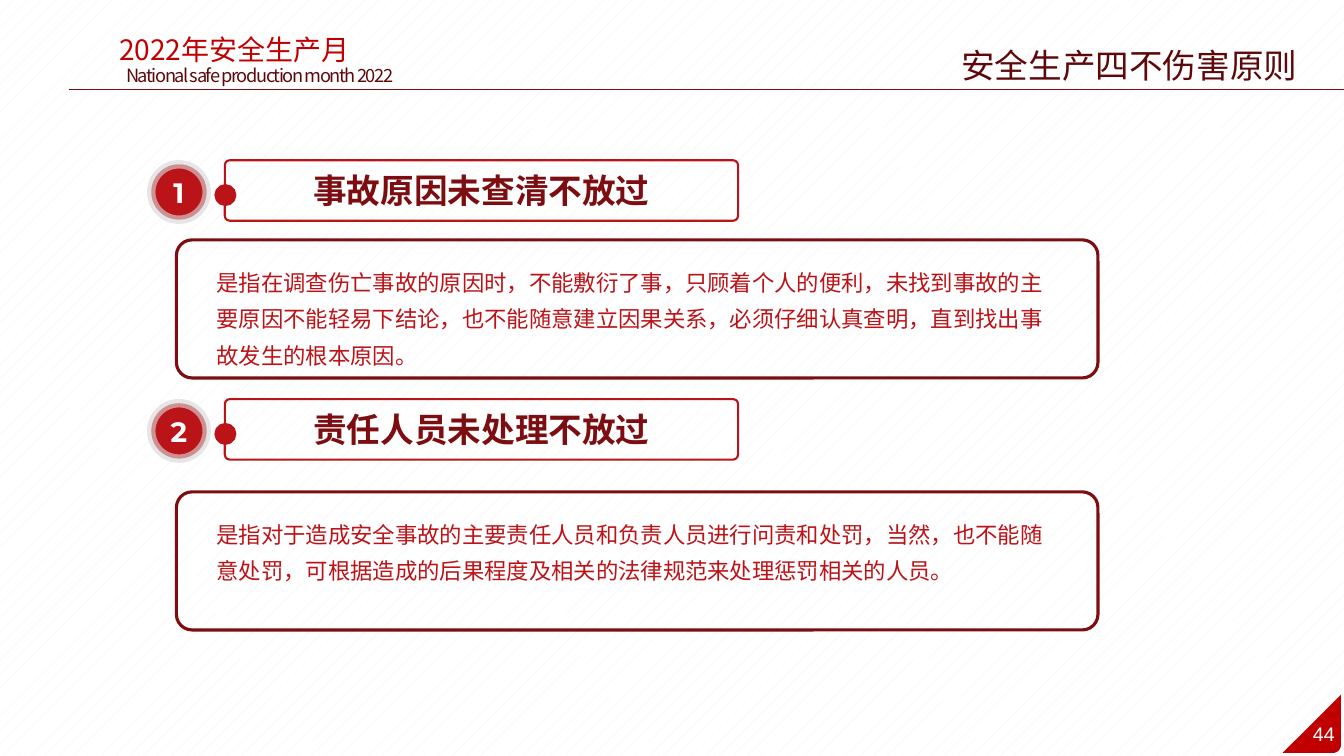
from dataclasses import dataclass
from math import cos, pi, sin
from typing import Optional

from lxml.etree import SubElement
from pptx import Presentation
from pptx.dml.color import RGBColor
from pptx.enum.dml import MSO_PATTERN
from pptx.enum.shapes import MSO_CONNECTOR, MSO_SHAPE as Preset
from pptx.enum.text import MSO_ANCHOR as Anchor, MSO_AUTO_SIZE as AutoSize, PP_ALIGN as Align
from pptx.oxml.ns import qn
from pptx.util import Inches, Pt


@dataclass(frozen=True)
class Theme:
    bright: str = "C00000"
    red: str = "BA1318"
    dark: str = "7C0D10"
    deep: str = "5D090C"
    white: str = "FFFFFF"
    ring: str = "D9D9D9"
    hatch: str = "F2F2F2"
    cjk: str = "Noto Sans CJK SC"
    digits: str = "Montserrat"
    page: str = "Arial"
    heading_size: int = 24
    banner_size: int = 20
    body_size: int = 16
    page_size: int = 14
    subtitle_size: int = 13


@dataclass(frozen=True)
class Box:
    left: float
    top: float
    width: float
    height: float

    def emu(self) -> tuple:
        return tuple(Inches(v) for v in (self.left, self.top, self.width, self.height))


@dataclass(frozen=True)
class Style:
    size: int
    color: str
    font: str
    bold: bool = False
    align: Align = Align.CENTER
    wrap: bool = True
    anchor: Anchor = Anchor.TOP
    line_spacing: Optional[float] = None
    tracking: Optional[int] = None


@dataclass(frozen=True)
class Principle:
    number: str
    heading: str
    detail: str
    top: float
    detail_top: float
    text_height: float


THEME = Theme()
PRINCIPLES = (
    Principle("1", "事故原因未查清不放过",
              "是指在调查伤亡事故的原因时，不能敷衍了事，只顾着个人的便利，未找到事故的主要原因不能轻易下结论，"
              "也不能随意建立因果关系，必须仔细认真查明，直到找出事故发生的根本原因。", 1.59, 2.38, 1.15),
    Principle("2", "责任人员未处理不放过",
              "是指对于造成安全事故的主要责任人员和负责人员进行问责和处罚，当然，也不能随意处罚，"
              "可根据造成的后果程度及相关的法律规范来处理惩罚相关的人员。", 3.96, 4.88, 0.79),
)


def rgb(color: str) -> RGBColor:
    return RGBColor.from_string(color)


def write(shape, text: str, style: Style) -> None:
    frame = shape.text_frame
    frame.auto_size = AutoSize.NONE
    frame.word_wrap = style.wrap
    frame.vertical_anchor = style.anchor
    paragraph = frame.paragraphs[0]
    paragraph.alignment = style.align
    if style.line_spacing:
        paragraph.line_spacing = style.line_spacing
    run = paragraph.add_run()
    run.text = text
    font = run.font
    font.size, font.bold, font.name = Pt(style.size), style.bold, style.font
    font.color.rgb = rgb(style.color)
    properties = run._r.get_or_add_rPr()
    SubElement(properties, qn("a:ea")).set("typeface", style.font)
    if style.tracking:
        properties.set("spc", str(style.tracking))


def add_text(slide, box: Box, text: str, style: Style) -> None:
    write(slide.shapes.add_textbox(*box.emu()), text, style)


def add_preset(slide, kind: Preset, box: Box, line: str, weight: float,
               fill: Optional[str] = None, corner: Optional[float] = None):
    shape = slide.shapes.add_shape(kind, *box.emu())
    shape.shadow.inherit = False
    if fill:
        shape.fill.solid()
        shape.fill.fore_color.rgb = rgb(fill)
    else:
        shape.fill.background()
    shape.line.color.rgb = rgb(line)
    shape.line.width = Pt(weight)
    if corner is not None:
        shape.adjustments[0] = corner
    return shape


def add_header(slide) -> None:
    rule = slide.shapes.add_connector(
        MSO_CONNECTOR.STRAIGHT, Inches(0.68), Inches(0.89), Inches(13.33), Inches(0.89))
    rule.line.color.rgb = rgb(THEME.dark)
    rule.line.width = Pt(0.75)
    SubElement(rule._element.spPr, qn("a:effectLst"))
    add_text(slide, Box(0.61, 0.27, 3.43, 0.44), "2022年安全生产月",
             Style(THEME.banner_size, THEME.bright, THEME.cjk))
    add_text(slide, Box(1.1, 0.59, 2.95, 0.32), "National safe production month 2022",
             Style(THEME.subtitle_size, THEME.deep, THEME.cjk, wrap=False, tracking=-100))
    title = slide.shapes.title
    title.left, title.top, title.width, title.height = Box(9.1, 0.4, 4.2, 0.5).emu()
    write(title, "安全生产四不伤害原则", Style(THEME.heading_size, THEME.deep, THEME.cjk))


def add_page_corner(slide, page: str) -> None:
    right, bottom, side, radius, steps = 13.3, 7.47, 0.58, 0.08, 6
    arc = [(right - radius + radius * cos(pi / 2 * i / steps),
            bottom - radius + radius * sin(pi / 2 * i / steps)) for i in range(steps + 1)]
    outline = slide.shapes.build_freeform(Inches(right), Inches(bottom - side))
    outline.add_line_segments([(Inches(x), Inches(y)) for x, y in arc + [(right - side, bottom)]])
    corner = outline.convert_to_shape()
    corner.shadow.inherit = False
    corner.fill.solid()
    corner.fill.fore_color.rgb = rgb(THEME.bright)
    corner.line.fill.background()
    add_text(slide, Box(12.91, 7.11, 0.44, 0.34), page,
             Style(THEME.page_size, THEME.white, THEME.page, wrap=False))


def add_principle(slide, item: Principle) -> None:
    # Number badge with a translucent ring
    badge = add_preset(slide, Preset.OVAL, Box(1.5, item.top + 0.04, 0.55, 0.55),
                       THEME.ring, 6, THEME.red)
    ring = badge.line.fill._xPr.find(qn("a:solidFill"))[0]
    SubElement(ring, qn("a:alpha")).set("val", "63000")
    write(badge, item.number,
          Style(THEME.banner_size, THEME.white, THEME.digits, bold=True, anchor=Anchor.MIDDLE))

    # Heading frame and its dot
    heading = add_preset(slide, Preset.ROUNDED_RECTANGLE, Box(2.23, item.top, 5.09, 0.6),
                         THEME.red, 1.5, corner=0.082)
    write(heading, item.heading, Style(THEME.heading_size, THEME.dark, THEME.cjk, bold=True,
                                       wrap=False, anchor=Anchor.MIDDLE))
    add_preset(slide, Preset.FLOWCHART_CONNECTOR, Box(2.14, item.top + 0.25, 0.19, 0.19),
               THEME.red, 2, THEME.red)

    # Explanation and its frame
    add_text(slide, Box(2.05, item.detail_top + 0.15, 8.48, item.text_height), item.detail,
             Style(THEME.body_size, THEME.red, THEME.cjk, align=Align.LEFT, line_spacing=1.35))
    add_preset(slide, Preset.ROUNDED_RECTANGLE, Box(1.75, item.detail_top, 9.14, 1.37),
               THEME.dark, 2.25, corner=0.113)


def main() -> None:
    deck = Presentation()
    deck.slide_width, deck.slide_height = Inches(13.33), Inches(7.5)
    slide = deck.slides.add_slide(deck.slide_layouts[5])

    # Background
    backdrop = slide.background.fill
    backdrop.patterned()
    backdrop.pattern = MSO_PATTERN.PERCENT_5
    backdrop.fore_color.rgb = rgb(THEME.hatch)
    backdrop.back_color.rgb = rgb(THEME.white)

    add_header(slide)
    add_page_corner(slide, "44")
    for item in PRINCIPLES:
        add_principle(slide, item)
    deck.save("out.pptx")


if __name__ == "__main__":
    main()
